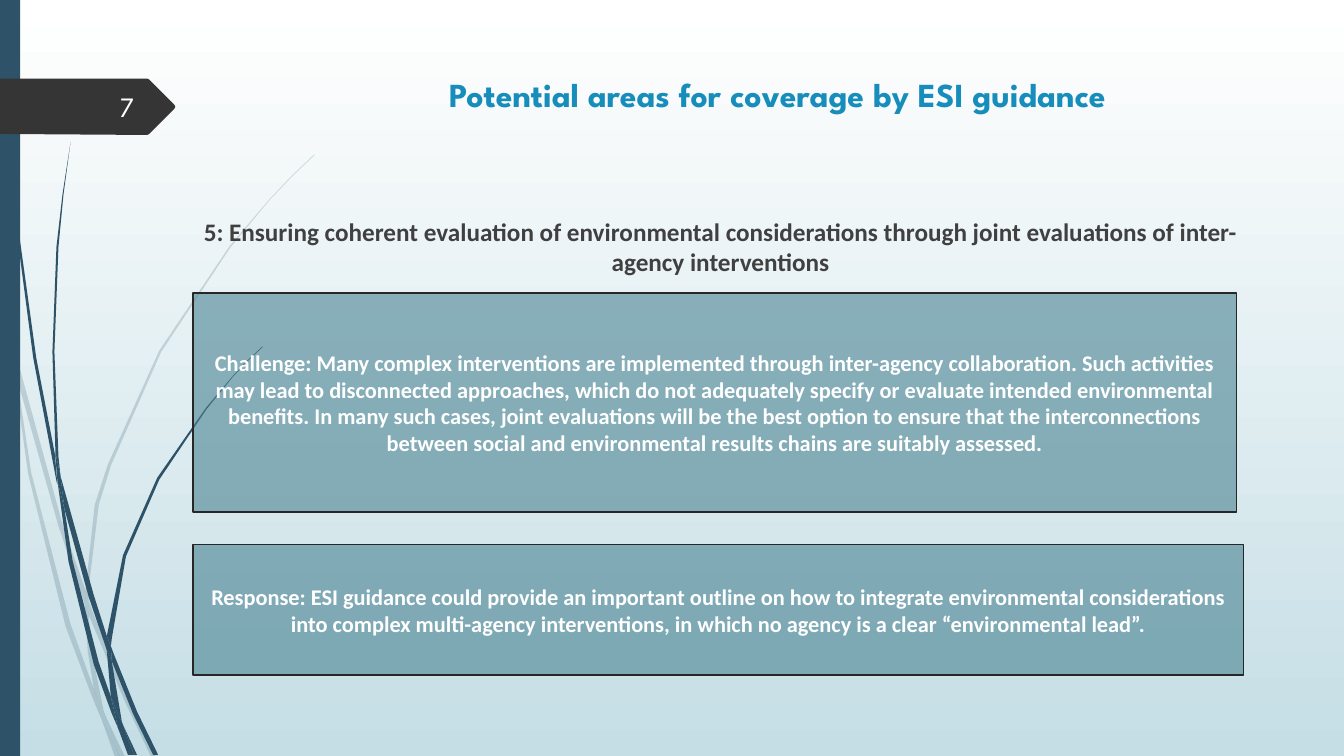
import pptx
import pptx.dml.color
import pptx.enum.shapes
import pptx.enum.text
import pptx.oxml.ns
import pptx.util
from lxml import etree
from pptx.util import Cm

COLORS = {
    "sky": "FFFFFF", "mist": "C5DEE5", "grass": "2E5369", "pointer": "353535",
    "title": "178DBB", "heading": "404040", "number": "FEFFFF",
    "panel": "498392", "panel_line": "272727", "panel_text": "FFFFFF",
}
ALIGN = pptx.enum.text.PP_ALIGN
ANCHOR = pptx.enum.text.MSO_ANCHOR
OUTLINE_UNIT = Cm(0.0254)  # outlines are drawn on a grid of hundredths of an inch

PALE_BLADES = [
    [(11, 350), (9, 322), (0, 282), (0, 299), (10, 344)],
    [(58, 522), (84, 599), (85, 586), (62, 520), (14, 345), (17, 376)],
    [(92, 607), (88, 596), (88, 610), (123, 694), (150, 751), (155, 751), (127, 692)],
    [(119, 751), (124, 751), (105, 711)],
    [(93, 683), (70, 619), (31, 469), (17, 376), (11, 350), (28, 470), (65, 621),
     (92, 693), (101, 714), (99, 707)],
    [(84, 599), (87, 646), (93, 683), (96, 692), (105, 711), (103, 706), (91, 646),
     (88, 610), (88, 608)],
    [(88, 584), (98, 501), (110, 462), (160, 349), (229, 245), (268, 198), (290, 175),
     (312, 154), (312, 153), (289, 175), (268, 197), (228, 244), (158, 348), (107, 461),
     (94, 501), (85, 584), (85, 586), (88, 596)],
    [(101, 714), (114, 751), (119, 751)],
    [(88, 608), (88, 610), (88, 596), (85, 586), (84, 599)],
    [(96, 692), (93, 683), (99, 707), (101, 714), (119, 751), (105, 711)],
]
DARK_BLADES = [
    [(7, 110), (17, 233), (33, 355), (56, 477), (57, 481), (55, 457), (55, 453),
     (36, 355), (19, 232), (8, 109), (5, 48), (4, 0), (3, 0), (4, 48)],
    [(88, 592), (106, 645), (106, 631), (93, 590), (60, 472), (64, 505)],
    [(113, 649), (110, 641), (111, 656), (132, 708), (152, 749), (157, 749), (136, 706)],
    [(110, 691), (98, 657), (72, 556), (64, 505), (57, 477), (68, 557), (93, 659),
     (111, 708), (117, 722), (116, 717)],
    [(60, 472), (58, 453), (54, 349), (58, 245), (63, 193), (70, 141), (62, 193),
     (56, 245), (52, 349), (55, 449)],
    [(133, 749), (136, 749), (122, 719)],
    [(57, 477), (64, 505), (60, 472), (55, 449), (55, 453)],
    [(111, 633), (125, 552), (158, 476), (205, 406), (231, 374), (245, 359), (261, 344),
     (260, 344), (245, 358), (231, 373), (204, 405), (156, 474), (122, 551), (106, 631),
     (110, 641)],
    [(117, 722), (127, 749), (131, 749)],
    [(106, 645), (110, 691), (116, 706), (122, 719), (121, 716), (111, 656), (109, 651)],
    [(106, 645), (109, 651), (111, 656), (110, 641), (106, 631)],
    [(116, 706), (110, 691), (116, 717), (117, 722), (130, 749), (133, 749), (122, 719)],
]
POINTER = [(0, 0), (146, 0), (148, 1), (173, 26), (174, 28), (173, 30), (148, 55),
           (146, 56), (0, 55)]


def rgb(name):
    return pptx.dml.color.RGBColor.from_string(COLORS[name])


def paint(shape, color, opacity=100, line=None):
    shape.shadow.inherit = False
    shape.fill.solid()
    shape.fill.fore_color.rgb = rgb(color)
    if opacity < 100:
        qn = pptx.oxml.ns.qn
        fill_color = shape._element.spPr.find(".//" + qn("a:srgbClr"))
        etree.SubElement(fill_color, qn("a:alpha")).set("val", str(opacity * 1000))
    if line:
        shape.line.color.rgb = rgb(line)
        shape.line.width = pptx.util.Pt(1.25)
    else:
        shape.line.fill.background()


def write(shape, text, *, size, font, color, bold=False, align=ALIGN.CENTER, anchor=ANCHOR.TOP):
    frame = shape.text_frame
    frame.word_wrap = True
    frame.vertical_anchor = anchor
    paragraph = frame.paragraphs[0]
    paragraph.alignment = align
    run = paragraph.add_run()
    run.text = text
    run.font.size = pptx.util.Pt(size)
    run.font.name = font
    run.font.bold = bold
    run.font.color.rgb = rgb(color)


def add_text(slide, box, text, **text_format):
    write(slide.shapes.add_textbox(*box), text, **text_format)


def add_outline(shapes, points, left, top, color, opacity=100):
    builder = shapes.build_freeform(*points[0], scale=OUTLINE_UNIT)
    builder.add_line_segments(points[1:], close=True)
    paint(builder.convert_to_shape(left, top), color, opacity)


def add_rectangle(slide, box, color, **look):
    rectangle = slide.shapes.add_shape(pptx.enum.shapes.MSO_SHAPE.RECTANGLE, *box)
    paint(rectangle, color, **look)
    return rectangle


def add_background(slide):
    fill = slide.background.fill
    fill.gradient()
    fill.gradient_angle = 270
    for stop, color in zip(fill.gradient_stops, ("sky", "mist")):
        stop.color.rgb = rgb(color)


def add_grass(slide, left, top, height):
    """Draw the two tufts of blades and the bar along the slide's left edge."""
    for blades, opacity in ((PALE_BLADES, 20), (DARK_BLADES, 100)):
        tuft = slide.shapes.add_group_shape()
        for blade in blades:
            add_outline(tuft.shapes, blade, left, top, "grass", opacity)
    add_rectangle(slide, (left, top, Cm(0.51), height), "grass")


def add_page_marker(slide, left, top, number):
    add_outline(slide.shapes, POINTER, left, top, "pointer")
    add_text(slide, (left + Cm(1.47), top + Cm(0.2), Cm(2.16), Cm(1.02)), number,
             size=20, font="League Spartan", color="number",
             align=ALIGN.RIGHT, anchor=ANCHOR.MIDDLE)


def add_panel(slide, box, text):
    panel = add_rectangle(slide, box, "panel", opacity=60, line="panel_line")
    write(panel, text, size=16, font="Calibri", color="panel_text", bold=True,
          anchor=ANCHOR.MIDDLE)


def main():
    deck = pptx.Presentation()
    deck.slide_width, deck.slide_height = Cm(33.87), Cm(19.05)
    slide = deck.slides.add_slide(deck.slide_layouts[6])

    add_background(slide)
    add_grass(slide, 0, 0, deck.slide_height)
    add_page_marker(slide, 0, Cm(1.98), "7")
    add_text(slide, (Cm(7.21), Cm(1.73), Cm(24.77), Cm(3.56)),
             "Potential areas for coverage by ESI guidance",
             size=24, font="League Spartan", color="title", bold=True)
    add_text(slide, (Cm(4.37), Cm(5.33), Cm(27.58), Cm(11.07)),
             "5: Ensuring coherent evaluation of environmental considerations through "
             "joint evaluations of inter-agency interventions",
             size=18, font="Calibri", color="heading", bold=True)
    add_panel(slide, (Cm(4.87), Cm(7.39), Cm(26.29), Cm(5.51)),
              "Challenge: Many complex interventions are implemented through inter-agency "
              "collaboration. Such activities may lead to disconnected approaches, which do "
              "not adequately specify or evaluate intended environmental benefits. In many "
              "such cases, joint evaluations will be the best option to ensure that the "
              "interconnections between social and environmental results chains are "
              "suitably assessed.")
    add_panel(slide, (Cm(4.87), Cm(13.72), Cm(26.47), Cm(3.3)),
              "Response: ESI guidance could provide an important outline on how to integrate "
              "environmental considerations into complex multi-agency interventions, in "
              "which no agency is a clear “environmental lead”.")
    deck.save("out.pptx")


if __name__ == "__main__":
    main()
